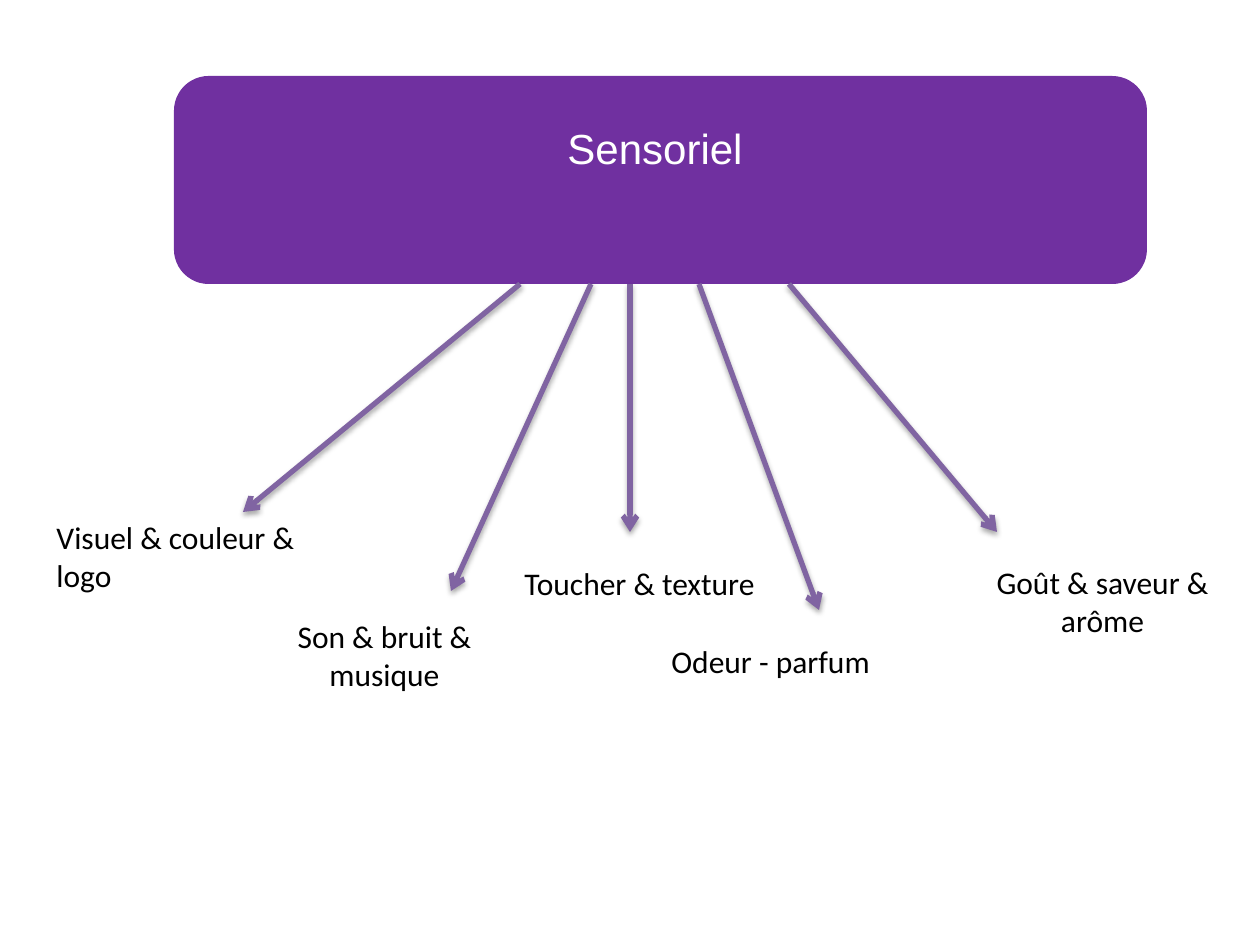
from lxml import etree
from pptx import Presentation
from pptx.dml.color import RGBColor
from pptx.enum.shapes import MSO_CONNECTOR, MSO_SHAPE
from pptx.enum.text import MSO_ANCHOR, MSO_AUTO_SIZE, PP_ALIGN
from pptx.oxml import parse_xml
from pptx.util import Pt

PX = 914400 / 126
PURPLE = RGBColor(0x70, 0x30, 0xA0)
MAUVE = RGBColor(0x80, 0x64, 0xA2)
WHITE = RGBColor(0xFF, 0xFF, 0xFF)
BLACK = RGBColor(0, 0, 0)
A = "http://schemas.openxmlformats.org/drawingml/2006/main"
SHADOW = (
    f'<a:effectLst xmlns:a="{A}">'
    '<a:outerShdw blurRad="40000" dist="23000" dir="5400000" rotWithShape="0">'
    '<a:srgbClr val="000000"><a:alpha val="35000"/></a:srgbClr>'
    '</a:outerShdw></a:effectLst>'
)
BANNER_BOTTOM = 284
LABEL_WIDTH = 297


def px(*lengths):
    """Turn pixel lengths into EMU."""
    return [round(n * PX) for n in lengths]


def write(sp, text, font, size, color, align):
    tf = sp.text_frame
    tf.word_wrap = True
    tf.auto_size = MSO_AUTO_SIZE.NONE
    tf.vertical_anchor = MSO_ANCHOR.TOP
    tf.text = text
    p = tf.paragraphs[0]
    p.alignment = align
    r = p.runs[0]
    r.font.name = font
    r.font.size = Pt(size)
    r.font.color.rgb = color


prs = Presentation()
prs.slide_width, prs.slide_height = px(1260, 945)
slide = prs.slides.add_slide(prs.slide_layouts[5])

banner = slide.shapes.add_shape(MSO_SHAPE.ROUNDED_RECTANGLE, *px(174, 76, 973, 208))
banner.shadow.inherit = False
banner.fill.solid()
banner.fill.fore_color.rgb = PURPLE
banner.line.fill.background()

title = slide.shapes.title
title.left, title.top, title.width, title.height = px(263, 116, 784, 63)
write(title, "Sensoriel", "Arial", 24, WHITE, PP_ALIGN.CENTER)
banner.element.addnext(title.element)  # title in front of the banner

# start x on the banner, then the tip
arrows = [
    (520, 243, 512),
    (591, 451, 591),
    (630, 630, 532),
    (699, 819, 610),
    (789, 997, 532),
]
for start_x, tip_x, tip_y in arrows:
    arrow = slide.shapes.add_connector(
        MSO_CONNECTOR.STRAIGHT, *px(start_x, BANNER_BOTTOM, tip_x, tip_y))
    arrow.line.color.rgb = MAUVE
    arrow.line.width = Pt(3)
    etree.SubElement(arrow.line._get_or_add_ln(), f"{{{A}}}tailEnd", type="arrow")
    arrow.element.spPr.append(parse_xml(SHADOW))

# left, top, height, text, alignment
labels = [
    (44, 512, 89, "Visuel & couleur & logo", PP_ALIGN.LEFT),
    (236, 611, 89, "Son & bruit & musique", PP_ALIGN.CENTER),
    (491, 558, 50, "Toucher & texture", PP_ALIGN.CENTER),
    (659, 636, 50, "Odeur - parfum", PP_ALIGN.LEFT),
    (954, 557, 89, "Goût & saveur & arôme", PP_ALIGN.CENTER),
]
for left, top, height, text, align in labels:
    label = slide.shapes.add_textbox(*px(left, top, LABEL_WIDTH, height))
    write(label, text, "Calibri", 18, BLACK, align)

prs.save("out.pptx")
